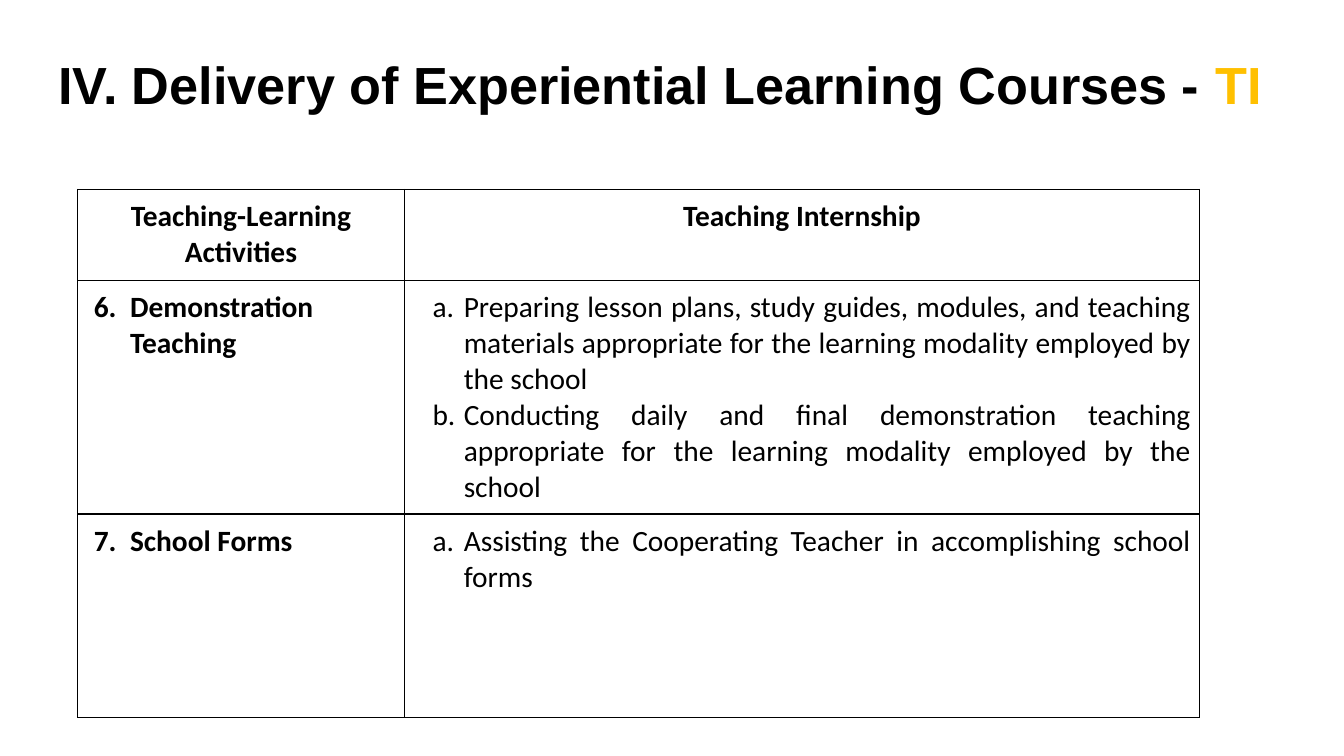
from lxml.etree import SubElement
from pptx import Presentation
from pptx.dml.color import RGBColor as Color
from pptx.enum.text import MSO_ANCHOR as Anchor, MSO_AUTO_SIZE as AutoSize, PP_ALIGN as Align
from pptx.oxml.ns import qn
from pptx.util import Inches, Pt

COLORS = {"ink": "000000", "accent": "FFC000"}

COLUMN_WIDTHS = [3.24, 7.89]
ROW_HEIGHTS = [0.9, 2.32, 2.02]
HEADINGS = ["Teaching-Learning Activities", "Teaching Internship"]
FIRST_NUMBER = 6
ACTIVITIES = [
    ("Demonstration Teaching", [
        "Preparing lesson plans, study guides, modules, and teaching materials "
        "appropriate for the learning modality employed by the school",
        "Conducting daily and final demonstration teaching appropriate for the "
        "learning modality employed by the school",
    ]),
    ("School Forms", [
        "Assisting the Cooperating Teacher in accomplishing school forms",
    ]),
]


def add_text(para, text, font="Calibri", size=21, color="ink", bold=False):
    span = para.add_run()
    span.text = text
    span.font.name = font
    span.font.size = Pt(size)
    span.font.bold = bold
    span.font.color.rgb = Color.from_string(COLORS[color])


def add_number(para, scheme, start, margin, indent):
    properties = para._p.get_or_add_pPr()
    properties.set("marL", str(Inches(margin)))
    properties.set("indent", str(Inches(indent)))
    bullet_color = SubElement(properties, qn("a:buClr"))
    SubElement(bullet_color, qn("a:srgbClr"), val=COLORS["ink"])
    SubElement(properties, qn("a:buAutoNum"), type=scheme, startAt=str(start))


def add_borders(cell, width=1):
    properties = cell._tc.get_or_add_tcPr()
    for index, side in enumerate(("lnL", "lnR", "lnT", "lnB")):
        line = SubElement(properties, qn(f"a:{side}"), w=str(Pt(width)))
        fill = SubElement(line, qn("a:solidFill"))
        SubElement(fill, qn("a:srgbClr"), val=COLORS["ink"])
        properties.insert(index, line)


class SlideBuilder:
    def __init__(self, deck):
        self.page = deck.slides.add_slide(deck.slide_layouts[5])

    def title(self, spans, left, top, width, height):
        box = self.page.shapes.title
        box.left, box.top = Inches(left), Inches(top)
        box.width, box.height = Inches(width), Inches(height)
        frame = box.text_frame
        frame.word_wrap = True
        frame.auto_size = AutoSize.NONE
        frame.vertical_anchor = Anchor.MIDDLE
        frame.margin_left = frame.margin_right = Inches(0.13)
        frame.margin_top = frame.margin_bottom = Inches(0.13)
        para = frame.paragraphs[0]
        para.alignment = Align.LEFT
        for text, color in spans:
            add_text(para, text, font="Arial", size=37.3, color=color, bold=True)

    def table(self, left, top, widths, heights):
        frame = self.page.shapes.add_table(
            len(heights), len(widths), Inches(left), Inches(top),
            Inches(sum(widths)), Inches(sum(heights)))
        table = frame.table
        table.first_row = table.horz_banding = False
        for column, width in zip(table.columns, widths):
            column.width = Inches(width)
        for row, height in zip(table.rows, heights):
            row.height = Inches(height)
        for cell in table.iter_cells():
            cell.fill.background()
            cell.margin_left = cell.margin_right = Inches(0.09)
            cell.margin_top = cell.margin_bottom = Inches(0.09)
            add_borders(cell)
        return table

    def heading(self, cell, text):
        para = cell.text_frame.paragraphs[0]
        para.alignment = Align.CENTER
        add_text(para, text, bold=True)

    def numbered(self, cell, items, scheme, margin, indent, start=1, level=0, bold=False):
        frame = cell.text_frame
        for index, item in enumerate(items):
            para = frame.add_paragraph() if index else frame.paragraphs[0]
            para.alignment = Align.JUSTIFY
            para.level = level
            add_number(para, scheme, start, margin, indent)
            add_text(para, item, bold=bold)


def main():
    deck = Presentation()
    deck.slide_width, deck.slide_height = Inches(13.33), Inches(7.5)
    slide = SlideBuilder(deck)

    # Title
    slide.title([("IV. Delivery of Experiential Learning Courses - ", "ink"), ("TI", "accent")],
                0.45, 0.38, 12.42, 0.89)

    # Table headings
    table = slide.table(0.77, 1.88, COLUMN_WIDTHS, ROW_HEIGHTS)
    for column, text in enumerate(HEADINGS):
        slide.heading(table.cell(0, column), text)

    # Activities and their tasks
    for row, (activity, tasks) in enumerate(ACTIVITIES, start=1):
        slide.numbered(table.cell(row, 0), [activity], "arabicPeriod", 0.43, -0.36,
                       start=FIRST_NUMBER + row - 1, bold=True)
        slide.numbered(table.cell(row, 1), tasks, "alphaLcPeriod", 0.5, -0.31, level=1)

    deck.save("out.pptx")


if __name__ == "__main__":
    main()
